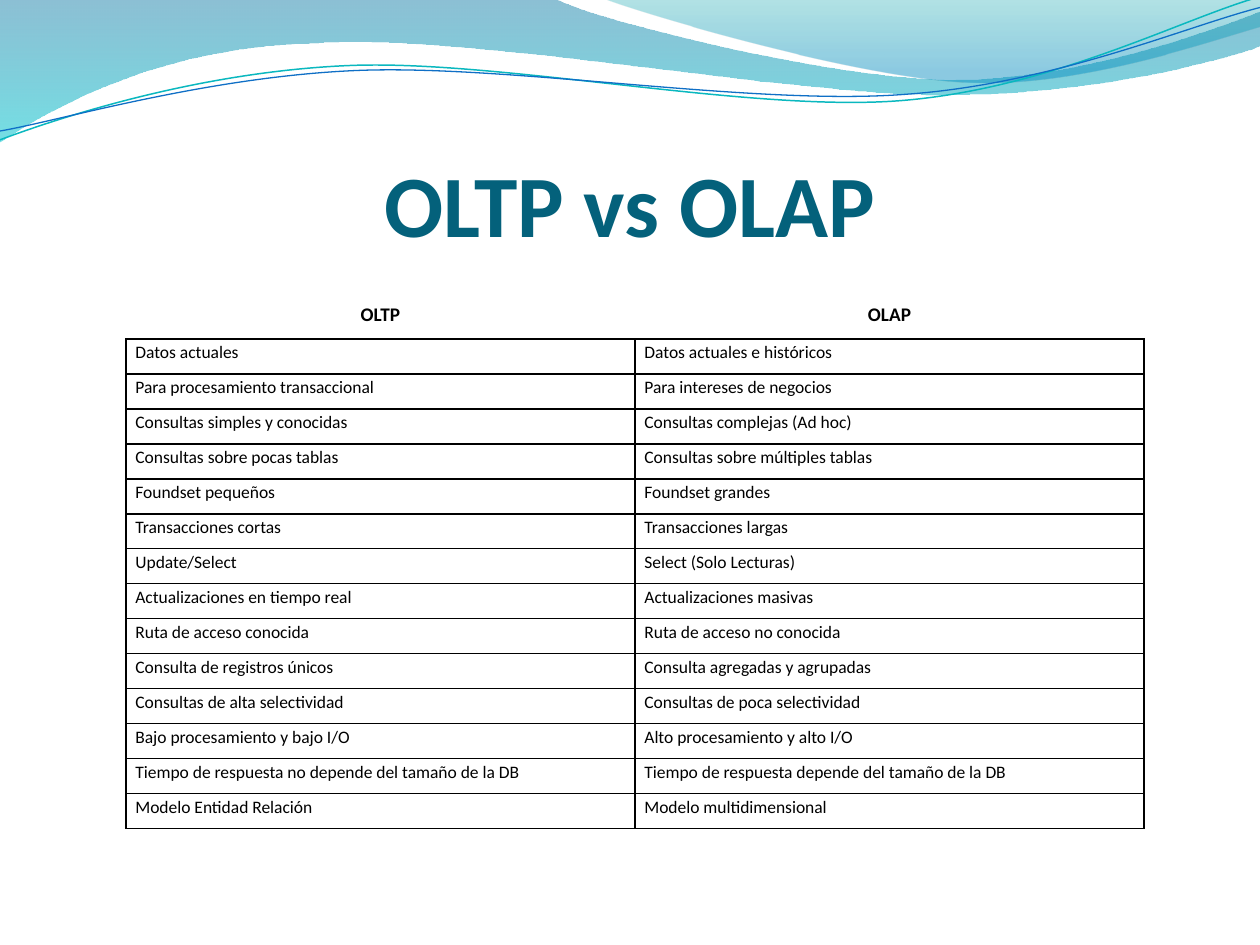
from dataclasses import dataclass
from math import cos, radians, sin

from lxml import etree
from pptx import Presentation
from pptx import util as u
from pptx.dml.color import RGBColor
from pptx.enum import text
from pptx.oxml.ns import qn


@dataclass(frozen=True)
class Theme:
    font: str = "Calibri"
    title_color: str = "04617B"
    ink: str = "000000"
    title_size: float = 50
    head_size: float = 11
    body_size: float = 10
    border: float = 1
    leading: float = 1.15
    cell_inset: float = 5.4


@dataclass(frozen=True)
class Box:
    """An area in grid units: the slide is 10 columns by 7.5 rows."""
    left: float
    top: float
    width: float
    height: float

    def emu(self):
        return [grid(n) for n in (self.left, self.top, self.width, self.height)]


THEME = Theme()
COLUMNS, ROWS = 10, 7.5
SLIDE_WIDTH = u.Inches(10)
STRAND_TILT = -2.7

# Each wave is a start point, then lines (2 numbers) or Bezier curves (6 numbers).
# Gradient stops are position, colour, opacity in percent.
RIBBONS = [
    ([(0, 0), (4.4, -0.01), (4.76, 0.17, 6.64, 0.63, 7.58, 0.63),
      (8.53, 0.63, 9.58, 0.26, 10, 0.09), (10.01, 0.36),
      (9.83, 0.44, 8.7, 0.76, 7.46, 0.75), (6.22, 0.75, 3.82, 0.28, 2.57, 0.34),
      (1.29, 0.36, 0.46, 0.83, -0.01, 1.13), (0, 0)],
     [(0, "0074A1", 45), (1, "00C6CF", 55)]),
    ([(4.79, -0.01), (5.09, 0.11, 6.82, 0.62, 7.69, 0.65),
      (8.56, 0.69, 9.61, 0.32, 10, 0.21), (10, 0), (4.79, -0.01)],
     [(0, "00A1A9", 30), (0.8, "008BBF", 45)]),
]
# Strands add the centre they are tilted about, a colour and a line width.
STRANDS = [
    ([(0, 1.11), (0.48, 0.93, 1.58, 0.57, 2.77, 0.52),
      (3.95, 0.47, 5.93, 0.89, 7.13, 0.8), (8.33, 0.71, 9.38, 0.15, 9.98, -0.02)],
     (4.99, 0.57), "0AB8BF", 0.85),
    ([(0, 1.04), (0.47, 0.96, 1.64, 0.61, 2.83, 0.56),
      (4.03, 0.51, 5.97, 0.84, 7.17, 0.75), (8.36, 0.67, 9.41, 0.21, 10, 0.06)],
     (5, 0.59), "0F6FC6", 0.75),
]

HEADINGS = ("OLTP", "OLAP")
COMPARISON = [
    ("Datos actuales", "Datos actuales e históricos"),
    ("Para procesamiento transaccional", "Para intereses de negocios"),
    ("Consultas simples y conocidas", "Consultas complejas (Ad hoc)"),
    ("Consultas sobre pocas tablas", "Consultas sobre múltiples tablas"),
    ("Foundset pequeños", "Foundset grandes"),
    ("Transacciones cortas", "Transacciones largas"),
    ("Update/Select", "Select (Solo Lecturas)"),
    ("Actualizaciones en tiempo real", "Actualizaciones masivas"),
    ("Ruta de acceso conocida", "Ruta de acceso no conocida"),
    ("Consulta de registros únicos", "Consulta agregadas y agrupadas"),
    ("Consultas de alta selectividad", "Consultas de poca selectividad"),
    ("Bajo procesamiento y bajo I/O", "Alto procesamiento y alto I/O"),
    ("Tiempo de respuesta no depende del tamaño de la DB",
     "Tiempo de respuesta depende del tamaño de la DB"),
    ("Modelo Entidad Relación", "Modelo multidimensional"),
]


def grid(units):
    return round(units * SLIDE_WIDTH / COLUMNS)


def apply(target, values):
    for name, value in values.items():
        setattr(target, name, value)


def write(para, words, size, color, bold=False, **layout):
    apply(para, layout)
    span = para.add_run()
    span.text = words
    apply(span.font, {"name": THEME.font, "size": u.Pt(size), "bold": bold})
    span.font.color.rgb = RGBColor.from_string(color)


def turn(point, centre, degrees):
    angle = radians(degrees)
    dx, dy = point[0] - centre[0], point[1] - centre[1]
    return (centre[0] + dx * cos(angle) - dy * sin(angle),
            centre[1] + dx * sin(angle) + dy * cos(angle))


def add_wave(page, box, segments, close, centre=(0, 0), tilt=0):
    """Lay out every knot as a line, then merge each curve's three into a Bezier."""
    knots = [turn(segment[i:i + 2], centre, -tilt)
             for segment in segments for i in range(0, len(segment), 2)]
    points = [(grid(box.left + x), grid(box.top + y)) for x, y in knots]
    builder = page.shapes.build_freeform(*points[0])
    builder.add_line_segments(points[1:], close=close)
    wave = builder.convert_to_shape()
    wave.shadow.inherit = False
    wave.rotation = tilt
    lines = iter(list(wave.element.iter(qn("a:lnTo"))))
    for segment in segments[1:]:
        first = next(lines)
        if len(segment) == 6:
            first.tag = qn("a:cubicBezTo")
            for line in (next(lines), next(lines)):
                first.append(line[0])
                line.getparent().remove(line)
    return wave


def add_header(page, box):
    for segments, stops in RIBBONS:
        ribbon = add_wave(page, box, segments, close=True)
        ribbon.line.fill.background()
        ribbon.fill.gradient()
        ribbon.fill.gradient_angle = 270
        for stop, (position, color, _) in zip(ribbon.fill.gradient_stops, stops):
            stop.position = position
            stop.color.rgb = RGBColor.from_string(color)
        for node, (_, _, opacity) in zip(ribbon.element.iter(qn("a:srgbClr")), stops):
            etree.SubElement(node, qn("a:alpha"), val=str(opacity * 1000))
    for segments, centre, color, width in STRANDS:
        strand = add_wave(page, box, segments, False, centre, STRAND_TILT)
        strand.fill.background()
        strand.line.color.rgb = RGBColor.from_string(color)
        strand.line.width = u.Pt(width)


def add_title(page, box, words):
    frame = page.shapes.add_textbox(*box.emu()).text_frame
    apply(frame, {"word_wrap": True, "vertical_anchor": text.MSO_ANCHOR.BOTTOM,
                  "margin_left": 0, "margin_right": 0,
                  "margin_top": grid(0.05), "margin_bottom": 0})
    write(frame.paragraphs[0], words, THEME.title_size, THEME.title_color, True,
          alignment=text.PP_ALIGN.CENTER)


def set_borders(cell, sides):
    properties = cell._tc.get_or_add_tcPr()
    for index, side in enumerate(sides):
        line = etree.Element(qn(f"a:ln{side}"), w=str(u.Pt(THEME.border)))
        fill = etree.SubElement(line, qn("a:solidFill"))
        etree.SubElement(fill, qn("a:srgbClr"), val=THEME.ink)
        properties.insert(index, line)


def add_comparison(page, box, head_height):
    rows = [HEADINGS, *COMPARISON]
    table = page.shapes.add_table(len(rows), len(HEADINGS), *box.emu()).table
    apply(table, {"first_row": False, "horz_banding": False})
    for column in table.columns:
        column.width = grid(box.width / len(HEADINGS))
    body_height = (box.height - head_height) / len(COMPARISON)
    inset = u.Pt(THEME.cell_inset)
    for r, words in enumerate(rows):
        is_head = r == 0
        table.rows[r].height = grid(head_height if is_head else body_height)
        for c, phrase in enumerate(words):
            cell = table.cell(r, c)
            apply(cell, {"margin_left": inset, "margin_right": inset,
                         "margin_top": 0, "margin_bottom": 0})
            cell.fill.background()
            set_borders(cell, "B" if is_head else "LRTB")
            write(cell.text_frame.paragraphs[0], phrase,
                  THEME.head_size if is_head else THEME.body_size, THEME.ink, is_head,
                  line_spacing=THEME.leading,
                  alignment=text.PP_ALIGN.CENTER if is_head else text.PP_ALIGN.LEFT)


def main():
    deck = Presentation()
    apply(deck, {"slide_width": SLIDE_WIDTH, "slide_height": grid(ROWS)})
    page = deck.slides.add_slide(deck.slide_layouts[6])
    add_header(page, Box(0, 0, COLUMNS, 1.14))
    add_title(page, Box(0.5, 0.77, 9, 1.25), "OLTP vs OLAP")
    add_comparison(page, Box(1, 2.38, 8.08, 4.2), head_height=0.31)
    deck.save("out.pptx")


if __name__ == "__main__":
    main()
